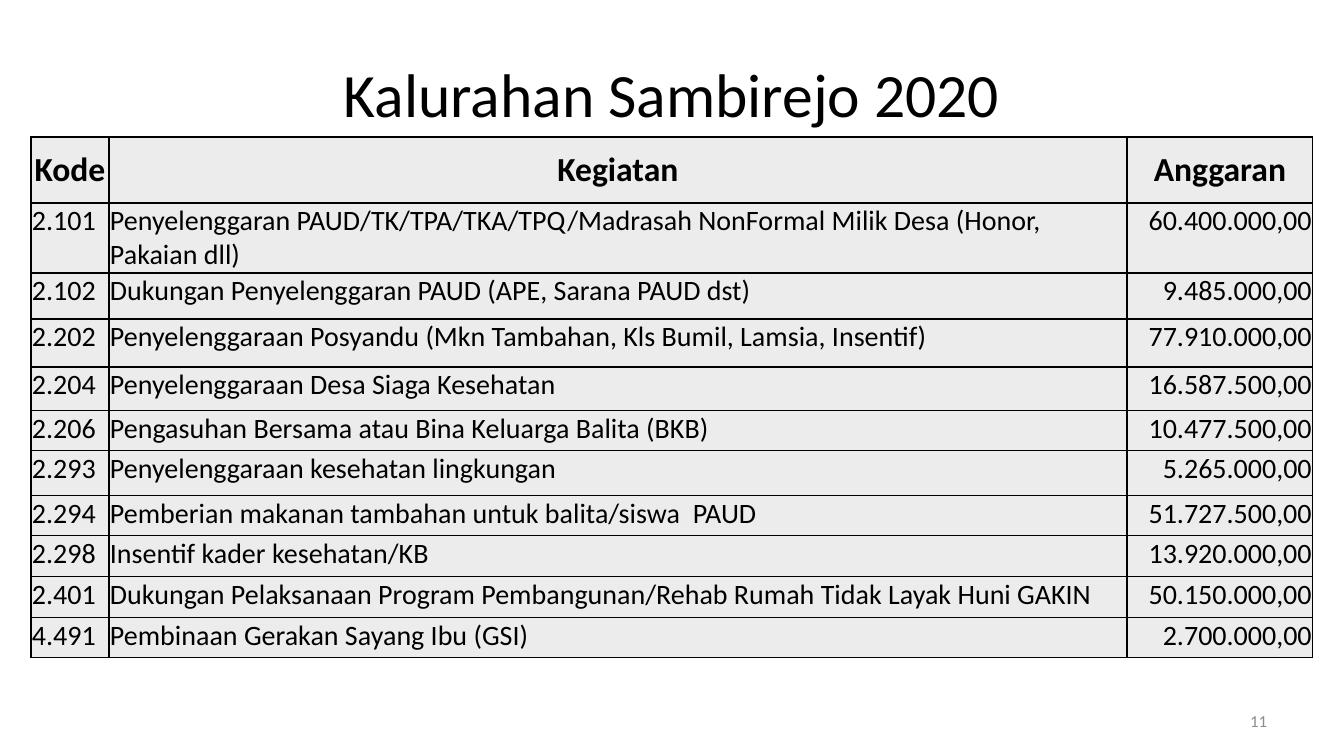
from dataclasses import dataclass

from lxml.etree import SubElement as Sub
from pptx import Presentation
from pptx.dml.color import RGBColor as Color
from pptx.enum.text import MSO_ANCHOR as Anchor, PP_ALIGN as Align
from pptx.oxml.ns import qn
from pptx.util import Emu, Pt


@dataclass(frozen=True)
class Theme:
    font: str = "Calibri"
    ink: str = "000000"
    muted: str = "8C8C8C"
    fill: str = "ECECEC"
    title: int = 44
    head: int = 24
    body: int = 20
    note: int = 12


THEME = Theme()
HEAD = ("Kode", "Kegiatan", "Anggaran")
ROWS = [
    ("2.101", "Penyelenggaran PAUD/TK/TPA/TKA/TPQ/Madrasah NonFormal Milik Desa (Honor, Pakaian dll)", "60.400.000,00"),
    ("2.102", "Dukungan Penyelenggaran PAUD (APE, Sarana PAUD dst)", "9.485.000,00"),
    ("2.202", "Penyelenggaraan Posyandu (Mkn Tambahan, Kls Bumil, Lamsia, Insentif)", "77.910.000,00"),
    ("2.204", "Penyelenggaraan Desa Siaga Kesehatan", "16.587.500,00"),
    ("2.206", "Pengasuhan Bersama atau Bina Keluarga Balita (BKB)", "10.477.500,00"),
    ("2.293", "Penyelenggaraan kesehatan lingkungan", "5.265.000,00"),
    ("2.294", "Pemberian makanan tambahan untuk balita/siswa  PAUD", "51.727.500,00"),
    ("2.298", "Insentif kader kesehatan/KB", "13.920.000,00"),
    ("2.401", "Dukungan Pelaksanaan Program Pembangunan/Rehab Rumah Tidak Layak Huni GAKIN", "50.150.000,00"),
    ("4.491", "Pembinaan Gerakan Sayang Ibu (GSI)", "2.700.000,00"),
]
WIDTHS = (78, 1018, 186)
HEIGHTS = (66, 70, 46, 48, 44, 40, 45, 40, 41, 41, 40)
SIDES = (Align.LEFT, Align.LEFT, Align.RIGHT)


def px(n):
    return Emu(round(n * 914400 / 100.8))


def write(frame, text, size, color, align, bold=False):
    par = frame.paragraphs[0]
    par.text = text
    par.alignment = align
    font = par.font
    font.name, font.size, font.bold = THEME.font, Pt(size), bold
    font.color.rgb = Color.from_string(color)


def label(slide, box, text, size, color, align):
    frame = slide.shapes.add_textbox(*map(px, box)).text_frame
    frame.word_wrap = True
    frame.vertical_anchor = Anchor.MIDDLE
    write(frame, text, size, color, align)


def border(cell):
    props = cell._tc.get_or_add_tcPr()
    for side in ("a:lnL", "a:lnR", "a:lnT", "a:lnB"):
        line = Sub(props, qn(side), w=str(Pt(1)))
        paint = Sub(line, qn("a:solidFill"))
        Sub(paint, qn("a:srgbClr"), val=THEME.ink)


def style(cell, text, align, head):
    border(cell)
    cell.fill.solid()
    cell.fill.fore_color.rgb = Color.from_string(THEME.fill)
    cell.margin_left = cell.margin_right = cell.margin_top = px(1)
    cell.margin_bottom = 0
    cell.vertical_anchor = Anchor.MIDDLE if head else Anchor.TOP
    size = THEME.head if head else THEME.body
    write(cell.text_frame, text, size, THEME.ink, Align.CENTER if head else align, head)


def budget(slide, left, top):
    data = [HEAD, *ROWS]
    box = (left, top, sum(WIDTHS), sum(HEIGHTS))
    table = slide.shapes.add_table(len(data), len(HEAD), *map(px, box)).table
    table.first_row = table.horz_banding = False
    for col, width in zip(table.columns, WIDTHS):
        col.width = px(width)
    for i, (row, height, texts) in enumerate(zip(table.rows, HEIGHTS, data)):
        row.height = px(height)
        for cell, text, side in zip(row.cells, texts, SIDES):
            style(cell, text, side, i == 0)


def main():
    deck = Presentation()
    deck.slide_width, deck.slide_height = px(1344), px(756)
    slide = deck.slides.add_slide(deck.slide_layouts[6])
    label(slide, (964, 701, 313, 40), "11", THEME.note, THEME.muted, Align.RIGHT)
    label(slide, (67, 30, 1210, 126), "Kalurahan Sambirejo 2020", THEME.title, THEME.ink, Align.CENTER)
    budget(slide, 31, 137)
    deck.save("out.pptx")


if __name__ == "__main__":
    main()
